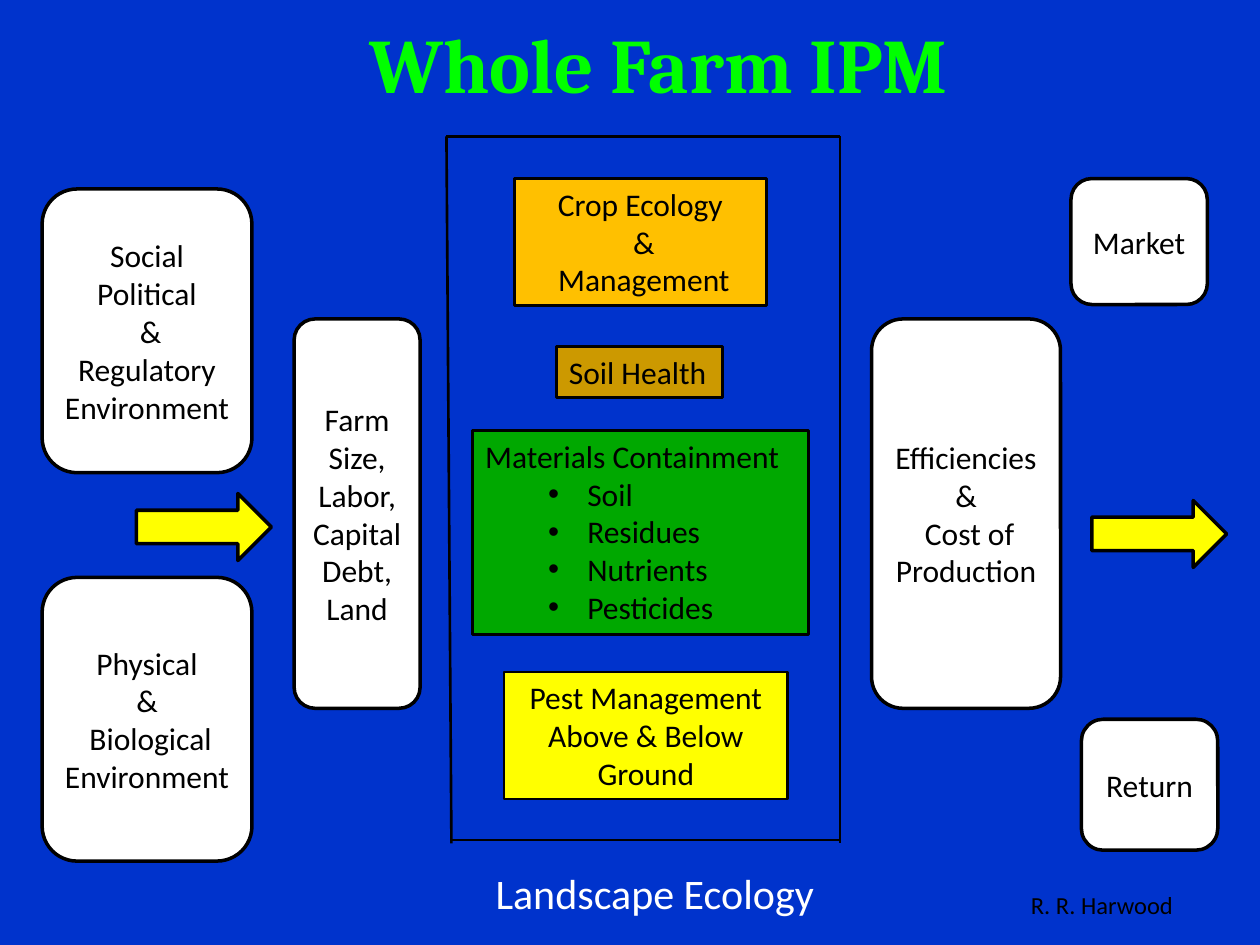
from lxml import etree
from pptx import Presentation
from pptx import util as u
from pptx.dml import color
from pptx.enum import shapes, text
from pptx.oxml import ns

Cm, Pt = u.Cm, u.Pt
ROUND = shapes.MSO_SHAPE.ROUNDED_RECTANGLE
RECT = shapes.MSO_SHAPE.RECTANGLE
ARROW = shapes.MSO_SHAPE.RIGHT_ARROW
LEFT, MID = text.PP_ALIGN.LEFT, text.PP_ALIGN.CENTER
TOP, HALF = text.MSO_ANCHOR.TOP, text.MSO_ANCHOR.MIDDLE
FIT, FIXED = text.MSO_AUTO_SIZE.SHAPE_TO_FIT_TEXT, text.MSO_AUTO_SIZE.NONE

CARDS = [
    ((0.85, 3.81, 4.23, 5.72), ["Social Political", " & Regulatory Environment"]),
    ((0.85, 11.64, 4.23, 5.72), ["Physical", "&", " Biological Environment"]),
    ((5.93, 6.43, 2.54, 7.85), ["Farm Size, Labor, Capital Debt, Land"]),
    ((17.57, 6.43, 3.81, 7.85), ["Efficiencies &", " Cost of Production"]),
    ((21.8, 14.5, 2.75, 2.64), ["Return"]),
    ((21.59, 3.6, 2.75, 2.54), ["Market"]),
]
PANELS = [
    ((10.37, 3.6, 5.08, 2.56), "FFC000", MID, ["Crop Ecology", " &", " Management"]),
    ((11.22, 6.99, 3.35, 1.03), "CC9900", LEFT, ["Soil Health"]),
    ((9.53, 8.68, 6.77, 4.11), "00A800", LEFT,
     ["Materials Containment", "Soil", "Residues", "Nutrients", "Pesticides"]),
    ((10.16, 13.55, 5.72, 2.56), "FFFF00", MID, ["Pest Management Above & Below Ground"]),
]
FRAME = [
    (9, 2.75, 16.93, 2.75),
    (9, 2.75, 9.1, 17),
    (16.93, 2.75, 16.93, 17),
    (9.1, 16.93, 16.93, 16.93),
]
ARROWS = [(2.75, 9.95, 2.72, 1.35), (22.01, 10.09, 2.72, 1.35)]
NOTES = [
    ((9.74, 17.36, 6.98, 1.28), "Landscape Ecology", 24, "FFFFFF"),
    ((20.53, 17.82, 3.6, 0.86), "R. R. Harwood", 14, "000000"),
]


def put(item, values):
    for name, value in values.items():
        setattr(item, name, value)


def tint(part, code):
    if hasattr(part, "solid"):
        part.solid()
        part = part.fore_color
    else:
        part = part.color
    part.rgb = color.RGBColor.from_string(code)


def write(shape, lines, align=MID, size=18, code="000000", face="Calibri",
          bold=False, anchor=TOP, fit=FIT, wrap=True):
    frame = shape.text_frame
    put(frame, {"word_wrap": wrap, "auto_size": fit, "vertical_anchor": anchor})
    frame.text = "\n".join(lines)
    for para in frame.paragraphs:
        para.alignment = align
        for run in para.runs:
            put(run.font, {"size": Pt(size), "name": face, "bold": bold})
            tint(run.font, code)


def bullet(para):
    para.level = 1
    props = para._p.get_or_add_pPr()
    props.set("marL", str(Cm(2.06)))
    props.set("indent", str(Cm(-0.79)))
    etree.SubElement(props, ns.qn("a:buFont")).set("typeface", "Arial")
    etree.SubElement(props, ns.qn("a:buChar")).set("char", "•")


def block(slide, kind, box, fill, width):
    shape = slide.shapes.add_shape(kind, *map(Cm, box))
    shape.shadow.inherit = False
    tint(shape.fill, fill)
    tint(shape.line, "000000")
    shape.line.width = Pt(width)
    return shape


def rule(slide, ends):
    line = slide.shapes.add_connector(shapes.MSO_CONNECTOR.STRAIGHT, *map(Cm, ends))
    tint(line.line, "000000")
    line.line.width = Pt(1.5)
    etree.SubElement(line._element.spPr, ns.qn("a:effectLst"))


def title(slide):
    head = slide.shapes.title
    box = dict(zip(("left", "top", "width", "height"), map(Cm, (7.2, 0.21, 12.45, 2.13))))
    put(head, box)
    write(head, ["Whole Farm IPM"], LEFT, 44, "00FF00", "Cambria", True, wrap=False)


def main():
    deck = Presentation()
    put(deck, {"slide_width": Cm(25.4), "slide_height": Cm(19.05)})
    slide = deck.slides.add_slide(deck.slide_layouts[5])
    tint(slide.background.fill, "0033CC")
    title(slide)
    for ends in FRAME:
        rule(slide, ends)
    for box, lines in CARDS:
        write(block(slide, ROUND, box, "FFFFFF", 2), lines, anchor=HALF, fit=FIXED)
    for box, fill, align, lines in PANELS:
        panel = block(slide, RECT, box, fill, 1.5)
        write(panel, lines, align)
        if align == LEFT:
            for para in panel.text_frame.paragraphs[1:]:
                bullet(para)
    for box in ARROWS:
        block(slide, ARROW, box, "FFFF00", 2)
    for box, words, size, code in NOTES:
        write(slide.shapes.add_textbox(*map(Cm, box)), [words], LEFT, size, code)
    deck.save("out.pptx")


if __name__ == "__main__":
    main()
